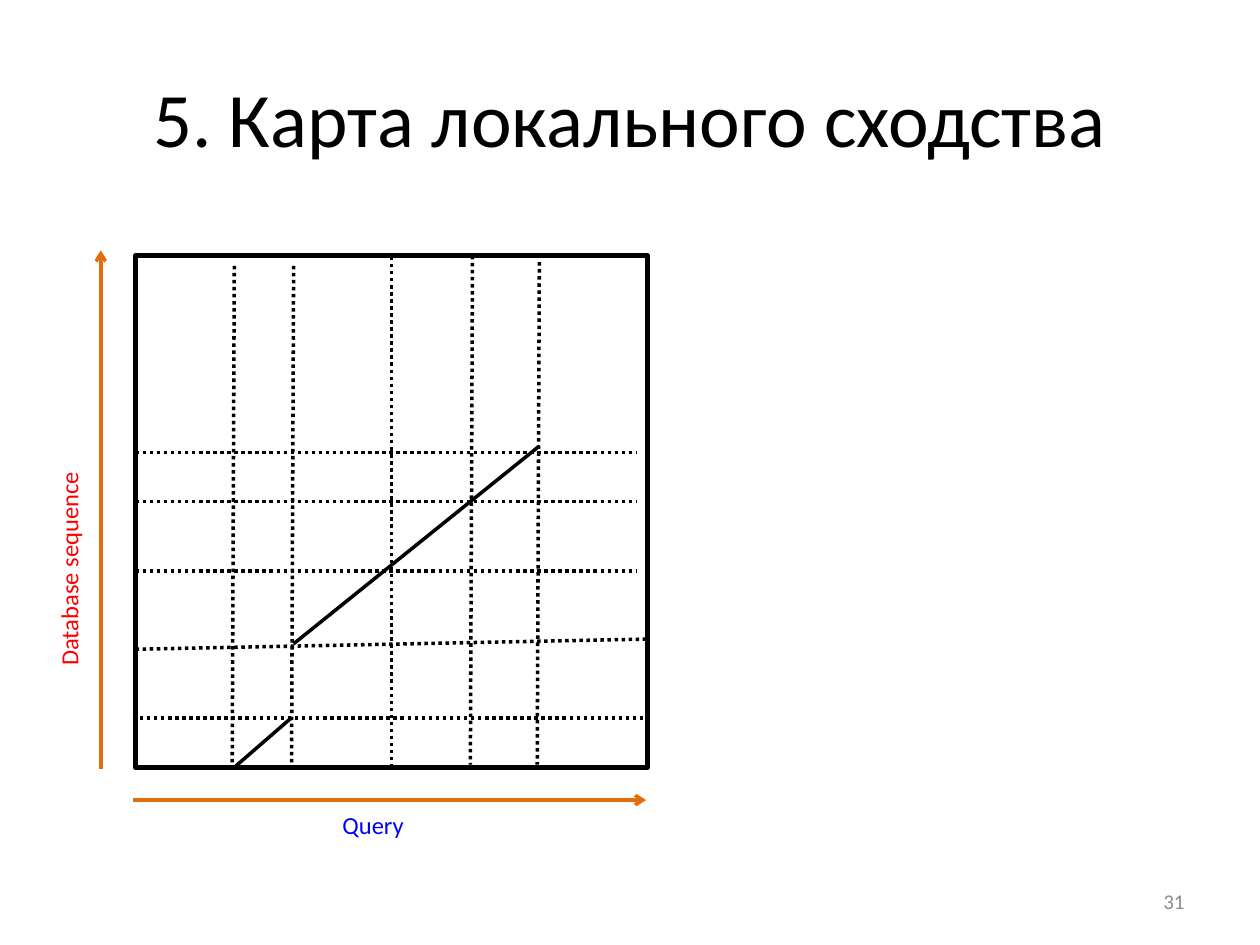
from lxml import etree
from pptx import Presentation
from pptx import util as u
from pptx.dml.color import RGBColor
from pptx.enum import dml, shapes, text
from pptx.oxml.ns import qn

COLORS = {"black": "000000", "axis": "E46C0A", "query": "0000FF",
          "database": "FF0000", "number": "8C8C8C"}
FONT = "Calibri"
TITLE = "5. Карта локального сходства"
TITLE_BOX = (36, 21.6, 648, 90)
MAP_BOX = (77.5, 146.2, 292.4, 292.4)
MATCHES = [(133.9, 438.5, 166.3, 410.4), (167.8, 367.9, 308.2, 254.9)]
COLUMNS = [(133.9, 151.9), (167.8, 151.9), (270, 146.2), (308.2, 149.8)]
COLUMN_BOTTOM, COLUMN_SLANT = 437, 1.2
ROWS = [258.5, 286.6, 326.2]
ROW_LEFT, ROW_RIGHT = 77.5, 364.3
LOWER_ROWS = [(77.5, 371, 370.1, 365.2), (75.9, 410.4, 367.9, 410.4)]
AXES = [(75.9, 457.2, 369.2, 457.2), (57.6, 439.2, 57.6, 143.1)]
LABELS = [
    ("Query", (188.6, 459.4, 54, 31), 0, 14, "query", "LEFT", "TOP"),
    ("Database sequence", (-30.2, 306, 139, 24), 270, 14, "database", "LEFT", "TOP"),
    ("31", (516, 500.5, 168, 28.8), 0, 12, "number", "RIGHT", "MIDDLE"),
]


def pts(values):
    return [u.Pt(v) for v in values]


def rgb(name):
    return RGBColor.from_string(COLORS[name])


def set_text(sp, content, size, color, align, anchor):
    tf = sp.text_frame
    tf.text = content
    tf.vertical_anchor = text.MSO_ANCHOR[anchor]
    p = tf.paragraphs[0]
    p.alignment = text.PP_ALIGN[align]
    font = p.runs[0].font
    font.name, font.size = FONT, u.Pt(size)
    font.color.rgb = rgb(color)


def add_line(s, ends, color="black", dotted=False, arrow=False):
    line = s.shapes.add_connector(shapes.MSO_CONNECTOR.STRAIGHT, *pts(ends))
    line.line.color.rgb = rgb(color)
    line.line.width = u.Pt(2)
    if dotted:
        line.line.dash_style = dml.MSO_LINE.ROUND_DOT
    if arrow:
        etree.SubElement(line.line._get_or_add_ln(), qn("a:tailEnd"), type="arrow")
    etree.SubElement(line._element.spPr, qn("a:effectLst"))
    return line


def main():
    prs = Presentation()
    prs.slide_width, prs.slide_height = u.Pt(720), u.Pt(540)
    s = prs.slides.add_slide(prs.slide_layouts[5])

    title = s.shapes.title
    title.left, title.top, title.width, title.height = pts(TITLE_BOX)
    set_text(title, TITLE, 44, "black", "CENTER", "MIDDLE")

    frame = s.shapes.add_shape(shapes.MSO_SHAPE.RECTANGLE, *pts(MAP_BOX))
    frame.shadow.inherit = False
    frame.fill.background()
    frame.line.color.rgb = rgb("black")
    frame.line.width = u.Pt(3)

    for ends in MATCHES:
        add_line(s, ends)
    columns = [(x, top, x - COLUMN_SLANT, COLUMN_BOTTOM) for x, top in COLUMNS]
    rows = [(ROW_LEFT, y, ROW_RIGHT, y) for y in ROWS]
    for ends in columns + rows + LOWER_ROWS:
        add_line(s, ends, dotted=True)

    left, top, width, height = MAP_BOX
    middle = left + width / 2
    center = add_line(s, (middle, top + height, middle, top), dotted=True)
    center.begin_connect(frame, 2)
    center.end_connect(frame, 0)

    for ends in AXES:
        add_line(s, ends, "axis", arrow=True)

    for content, box, rotation, size, color, align, anchor in LABELS:
        label = s.shapes.add_textbox(*pts(box))
        label.rotation = rotation
        label.text_frame.word_wrap = False
        set_text(label, content, size, color, align, anchor)

    prs.save("out.pptx")


if __name__ == "__main__":
    main()
